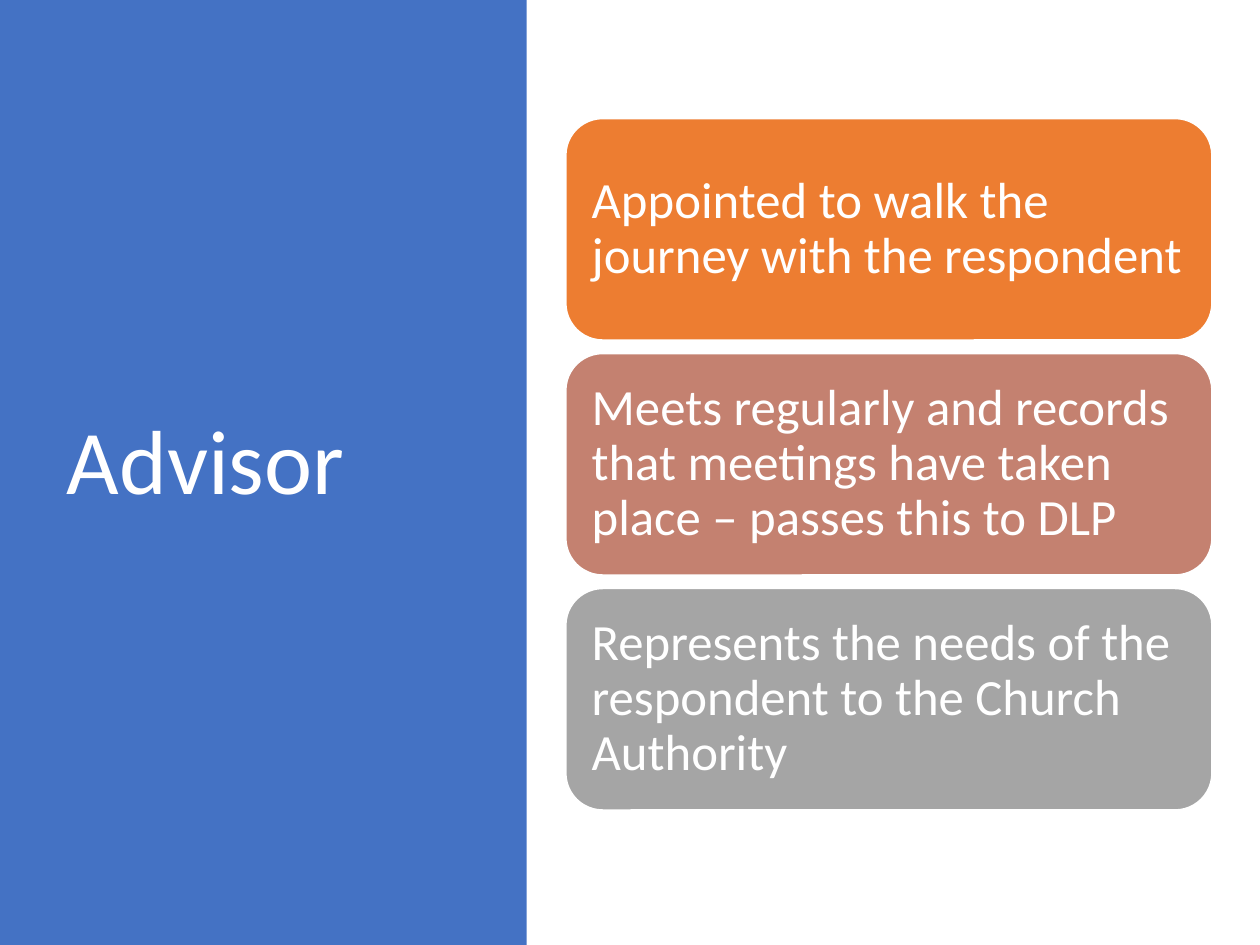
import pptx
import pptx.dml.color
import pptx.enum.shapes
import pptx.enum.text
import pptx.util

Inches = pptx.util.Inches
RGBColor = pptx.dml.color.RGBColor
SHAPE = pptx.enum.shapes.MSO_SHAPE

WHITE = RGBColor(0xFF, 0xFF, 0xFF)
BLUE = RGBColor(0x44, 0x72, 0xC4)
ORANGE = RGBColor(0xED, 0x7D, 0x31)
ROSE = RGBColor(0xC4, 0x81, 0x70)
GREY = RGBColor(0xA5, 0xA5, 0xA5)

DUTIES = [
    ("Appointed to walk the journey with the respondent", ORANGE),
    ("Meets regularly and records that meetings have taken place – passes this to DLP", ROSE),
    ("Represents the needs of the respondent to the Church Authority", GREY),
]
CARD_TOP = 0.94
CARD_HEIGHT = 1.76
CARD_PITCH = 1.865


def write_text(frame, text, size):
    """Set one left-aligned, vertically centred white paragraph."""
    frame.word_wrap = True
    frame.auto_size = pptx.enum.text.MSO_AUTO_SIZE.NONE
    frame.vertical_anchor = pptx.enum.text.MSO_ANCHOR.MIDDLE
    paragraph = frame.paragraphs[0]
    paragraph.alignment = pptx.enum.text.PP_ALIGN.LEFT
    paragraph.line_spacing = 0.9
    run = paragraph.add_run()
    run.text = text
    run.font.name = "Calibri"
    run.font.size = pptx.util.Pt(size)
    run.font.color.rgb = WHITE


def add_filled(kind, left, top, width, height, color):
    shape = slide.shapes.add_shape(
        kind, Inches(left), Inches(top), Inches(width), Inches(height))
    shape.shadow.inherit = False
    shape.fill.solid()
    shape.fill.fore_color.rgb = color
    return shape


presentation = pptx.Presentation()
presentation.slide_width = Inches(10)
presentation.slide_height = Inches(7.5)
slide = presentation.slides.add_slide(presentation.slide_layouts[5])

title = slide.shapes.title
title.left, title.top = Inches(0.43), Inches(0.68)
title.width, title.height = Inches(3.12), Inches(6.02)
write_text(title.text_frame, "Advisor", 52)

# The side panel sits behind the title
panel = add_filled(SHAPE.RECTANGLE, 0, 0, 4.18, 7.5, BLUE)
panel.line.fill.background()
title.element.addprevious(panel.element)

for index, (duty, color) in enumerate(DUTIES):
    card = add_filled(SHAPE.ROUNDED_RECTANGLE, 4.49, CARD_TOP + index * CARD_PITCH,
                      5.13, CARD_HEIGHT, color)
    card.line.color.rgb = WHITE
    card.line.width = pptx.util.Pt(1)
    frame = card.text_frame
    frame.margin_left = frame.margin_right = Inches(0.12)
    frame.margin_top = frame.margin_bottom = Inches(0.12)
    write_text(frame, duty, 29)

presentation.save("out.pptx")
